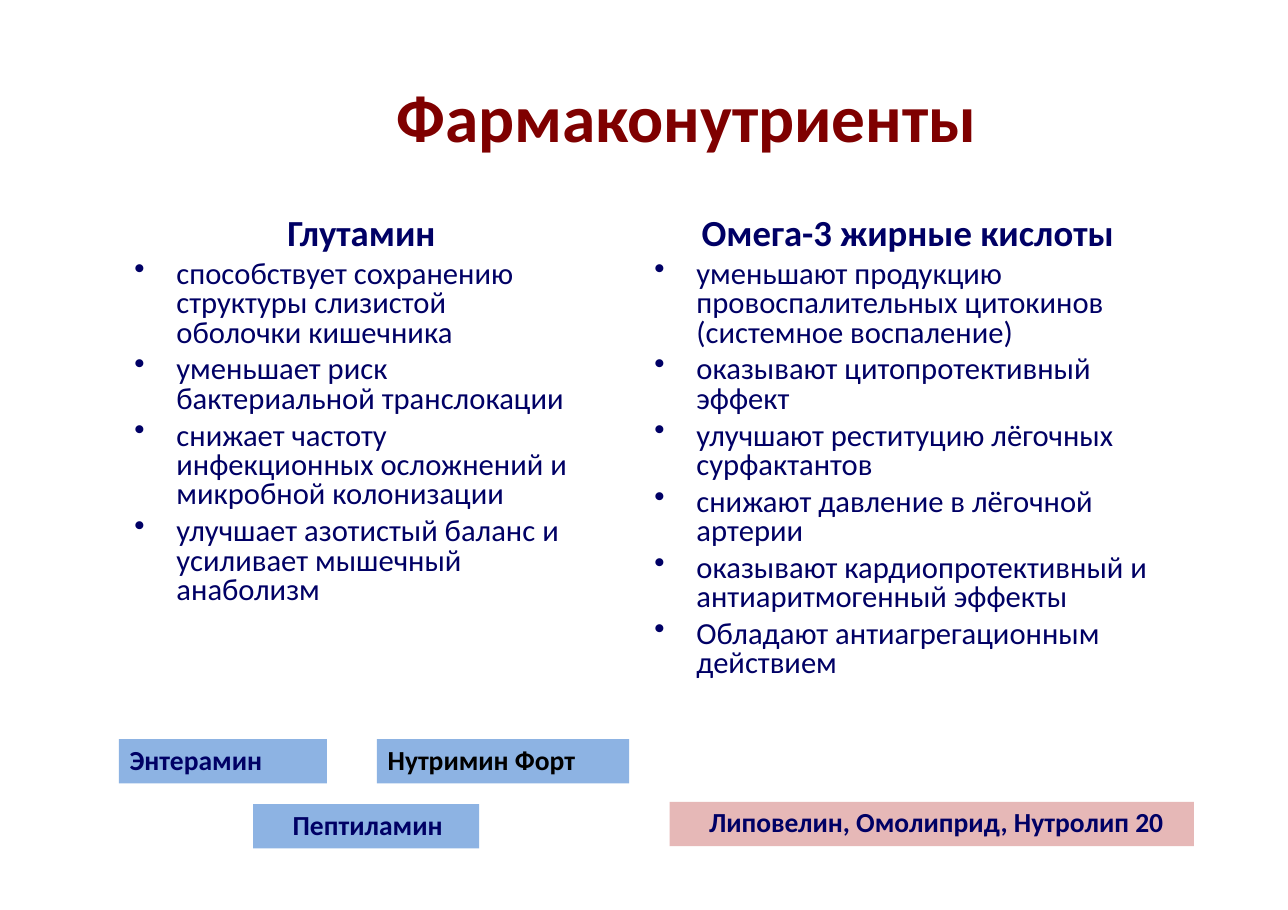
from dataclasses import dataclass

from lxml.etree import SubElement
from pptx import Presentation
from pptx.dml.color import RGBColor
from pptx.enum.shapes import MSO_SHAPE
from pptx.enum.text import MSO_ANCHOR, MSO_AUTO_SIZE, PP_ALIGN
from pptx.oxml.ns import qn
from pptx.slide import Slide
from pptx.text.text import TextFrame, _Paragraph
from pptx.util import Cm, Pt

COLORS = {
    "title": "7F0000",
    "navy": "000065",
    "black": "000000",
    "blue": "8DB3E3",
    "pink": "E6B8B7",
}
FONT = "Calibri"
BULLET_INDENT = 1.0
BULLET_HANG = 0.97


@dataclass
class Column:
    left: float
    width: float
    height: float
    heading: str
    heading_indent: float
    items: list[str]


@dataclass
class Label:
    text: str
    left: float
    top: float
    width: float
    indent: float
    fill: str = "blue"
    color: str = "navy"


COLUMNS = [
    Column(3.07, 10.26, 9.22, "Глутамин", 3.56, [
        "способствует сохранению структуры слизистой оболочки кишечника",
        "уменьшает риск бактериальной транслокации",
        "снижает частоту инфекционных осложнений и микробной колонизации",
        "улучшает азотистый баланс и усиливает мышечный анаболизм",
    ]),
    Column(15.06, 11.4, 10.92, "Омега-3 жирные кислоты", 1.12, [
        "уменьшают продукцию провоспалительных цитокинов (системное воспаление)",
        "оказывают цитопротективный эффект",
        "улучшают реституцию лёгочных сурфактантов",
        "снижают давление в лёгочной артерии",
        "оказывают кардиопротективный и антиаритмогенный эффекты",
        "Обладают антиагрегационным действием",
    ]),
]

LABELS = [
    Label("Энтерамин", 2.74, 17.04, 4.8, 0.25),
    Label("Нутримин Форт", 8.69, 17.04, 5.82, 0.25, color="black"),
    Label("Пептиламин", 5.84, 18.54, 5.21, 0.91),
    Label("Липовелин, Омолиприд, Нутролип 20", 15.44, 18.49, 12.09, 0.91, fill="pink"),
]


def prepare_frame(frame: TextFrame, top_inset: float) -> None:
    frame.word_wrap = True
    frame.auto_size = MSO_AUTO_SIZE.NONE
    frame.vertical_anchor = MSO_ANCHOR.TOP
    frame.margin_left = frame.margin_right = frame.margin_bottom = 0
    frame.margin_top = Cm(top_inset)


def format_paragraph(paragraph: _Paragraph, size: float, color: str, before: float,
                     indent: float = 0, bold: bool = True, bullet: bool = False) -> None:
    paragraph.alignment = PP_ALIGN.LEFT
    paragraph.space_before = Pt(before)
    properties = paragraph._p.get_or_add_pPr()
    properties.set("marL", str(Cm(indent)))
    properties.set("indent", str(-Cm(BULLET_HANG) if bullet else 0))
    if bullet:
        paragraph.line_spacing = 0.8
        SubElement(properties, qn("a:buChar")).set("char", "•")
    font = paragraph.font
    font.name = FONT
    font.size = Pt(size)
    font.bold = bold
    font.color.rgb = RGBColor.from_string(COLORS[color])


def add_title(slide: Slide, text: str) -> None:
    title = slide.shapes.title
    title.left, title.top, title.width, title.height = Cm(9.14), Cm(1.7), Cm(13.49), Cm(1.93)
    prepare_frame(title.text_frame, 0.03)
    title.text_frame.text = text
    format_paragraph(title.text_frame.paragraphs[0], 44, "title", 1)


def add_column(slide: Slide, column: Column) -> None:
    box = slide.shapes.add_textbox(Cm(column.left), Cm(4.8), Cm(column.width), Cm(column.height))
    frame = box.text_frame
    prepare_frame(frame, 0.03)
    frame.text = column.heading
    format_paragraph(frame.paragraphs[0], 24, "navy", 1, column.heading_indent)
    for item in column.items:
        paragraph = frame.add_paragraph()
        paragraph.text = item
        format_paragraph(paragraph, 20, "navy", 4.8, BULLET_INDENT, bold=False, bullet=True)


def add_label(slide: Slide, label: Label) -> None:
    shape = slide.shapes.add_shape(
        MSO_SHAPE.RECTANGLE, Cm(label.left), Cm(label.top), Cm(label.width), Cm(1.02))
    shape.shadow.inherit = False
    shape.fill.solid()
    shape.fill.fore_color.rgb = RGBColor.from_string(COLORS[label.fill])
    shape.line.fill.background()
    prepare_frame(shape.text_frame, 0.08)
    shape.text_frame.text = label.text
    format_paragraph(shape.text_frame.paragraphs[0], 18, label.color, 2.4, label.indent)


def main() -> None:
    presentation = Presentation()
    presentation.slide_width = Cm(29.7)
    presentation.slide_height = Cm(20.98)
    slide = presentation.slides.add_slide(presentation.slide_layouts.get_by_name("Title Only"))

    # Title
    add_title(slide, "Фармаконутриенты")

    # Two columns of effects
    for column in COLUMNS:
        add_column(slide, column)

    # Preparations
    for label in LABELS:
        add_label(slide, label)

    presentation.save("out.pptx")


if __name__ == "__main__":
    main()
